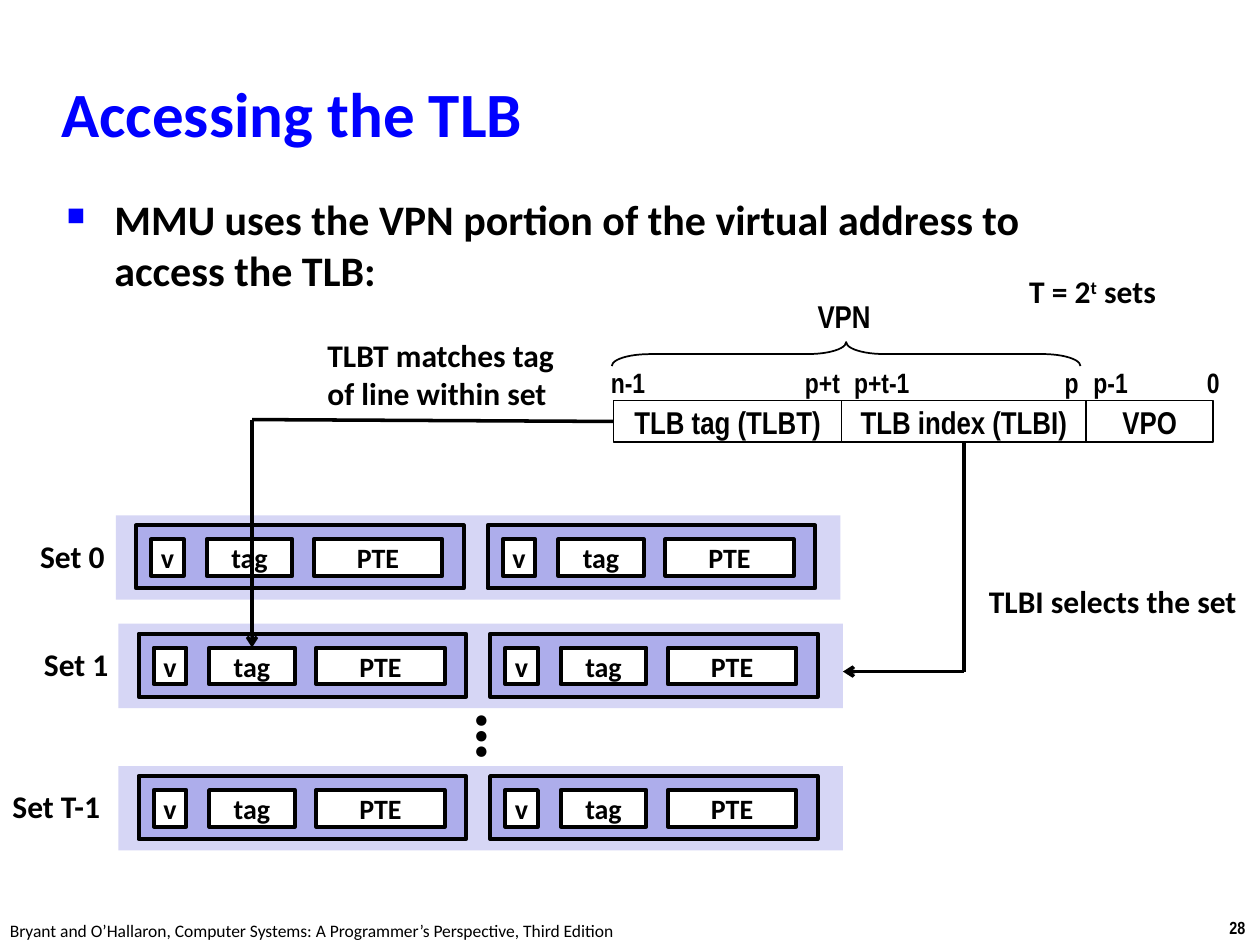
from dataclasses import dataclass

from lxml import etree
from pptx import Presentation
from pptx import util as u
from pptx.dml.color import RGBColor
from pptx.enum import shapes, text
from pptx.oxml.ns import qn


@dataclass(frozen=True)
class Theme:
    black: RGBColor = RGBColor(0, 0, 0)
    white: RGBColor = RGBColor(255, 255, 255)
    accent: RGBColor = RGBColor(0, 0, 255)
    set_fill: RGBColor = RGBColor(0xD6, 0xD6, 0xF5)
    line_fill: RGBColor = RGBColor(0xAD, 0xAD, 0xEB)
    sans: str = "Calibri"
    narrow: str = "Arial Narrow"
    title: int = 36
    body: int = 24
    label: int = 18
    small: int = 16
    footer: int = 10
    dots: int = 40


T = Theme()
MIDDLE = text.MSO_ANCHOR.MIDDLE


def inches(*values):
    return [u.Inches(v) for v in values]


def add_child(parent, tag, **attrs):
    child = etree.SubElement(parent, qn(tag))
    for name, value in attrs.items():
        child.set(name, value)
    return child


def format_runs(p, size, font, color=T.black, bold=True):
    for r in p.runs:
        r.font.size = u.Pt(size)
        r.font.name = font
        r.font.bold = bold
        r.font.color.rgb = color


def add_text(s, words, box, size=T.label, font=T.sans, color=T.black,
             bold=True, wrap=False, anchor=text.MSO_ANCHOR.TOP, grow=True):
    sp = s.shapes.add_textbox(*inches(*box))
    tf = sp.text_frame
    tf.text = words
    tf.word_wrap = wrap
    tf.vertical_anchor = anchor
    if grow:
        tf.auto_size = text.MSO_AUTO_SIZE.SHAPE_TO_FIT_TEXT
    format_runs(tf.paragraphs[0], size, font, color, bold)
    return sp


def add_box(s, box, fill, line_width=None, words="", size=T.small, font=T.sans):
    sp = s.shapes.add_shape(shapes.MSO_SHAPE.RECTANGLE, *inches(*box))
    sp.shadow.inherit = False
    sp.fill.solid()
    sp.fill.fore_color.rgb = fill
    if line_width:
        sp.line.color.rgb = T.black
        sp.line.width = u.Pt(line_width)
    else:
        sp.line.fill.background()
    if words:
        tf = sp.text_frame
        tf.text = words
        tf.word_wrap = False
        tf.vertical_anchor = MIDDLE
        tf.paragraphs[0].alignment = text.PP_ALIGN.CENTER
        format_runs(tf.paragraphs[0], size, font)
    return sp


def add_line(s, start, end, arrow=False):
    c = s.shapes.add_connector(shapes.MSO_CONNECTOR.STRAIGHT,
                               *inches(*start, *end))
    c.line.color.rgb = T.black
    c.line.width = u.Pt(2)
    if arrow:
        add_child(c.line._get_or_add_ln(), "a:tailEnd", type="arrow")
    add_child(c._element.spPr, "a:effectLst")
    return c


def add_bullet(p):
    """Give the paragraph a hanging square bullet in the accent colour."""
    pPr = p._p.get_or_add_pPr()
    pPr.set("marL", str(u.Inches(0.38)))
    pPr.set("indent", str(-u.Inches(0.38)))
    add_child(add_child(pPr, "a:buClr"), "a:srgbClr", val=str(T.accent))
    add_child(pPr, "a:buSzPct", val="60000")
    add_child(pPr, "a:buChar", char="■")


def add_heading(s):
    add_text(s, "Accessing the TLB", (0.39, 0.48, 8.3, 0.83), T.title,
             color=T.accent, wrap=True, anchor=MIDDLE, grow=False)
    body = add_text(
        s, "MMU uses the VPN portion of the virtual address to access the TLB:",
        (0.43, 1.49, 8.64, 0.93), T.body, wrap=True, grow=False)
    p = body.text_frame.paragraphs[0]
    p.space_before = u.Pt(4.8)
    add_bullet(p)


def add_address(s):
    """Draw the virtual address and return its tag and index fields."""
    fields = []
    x = 4.87
    for words, width in (("TLB tag (TLBT)", 1.81), ("TLB index (TLBI)", 1.94),
                         ("VPO", 1.01)):
        fields.append(add_box(s, (x, 3.18, width, 0.33), T.white, 1, words,
                              T.label, T.narrow))
        x += width

    for words, left, width in (("n-1", 4.75, 0.48), ("p+t", 6.29, 0.48),
                               ("p+t-1", 6.68, 0.65), ("p", 8.35, 0.31),
                               ("p-1", 8.58, 0.48), ("0", 9.48, 0.3)):
        add_text(s, words, (left, 2.85, width, 0.37), T.small, T.narrow,
                 anchor=MIDDLE)

    brace = s.shapes.add_shape(shapes.MSO_SHAPE.LEFT_BRACE,
                               *inches(6.62, 0.95, 0.19, 3.72))
    brace.rotation = 90
    brace.adjustments[0] = 1.595
    brace.adjustments[1] = 0.5
    brace.shadow.inherit = False
    brace.fill.background()
    brace.line.color.rgb = T.black
    brace.line.width = u.Pt(1)
    add_text(s, "VPN", (6.39, 2.31, 0.63, 0.4), font=T.narrow, anchor=MIDDLE)
    return fields[:2]


def add_set(s, left, top):
    """Draw one set of two cache lines and return their tag cells."""
    add_box(s, (left, top, 5.75, 0.67), T.set_fill)
    tags = []
    for x in (left + 0.16, left + 2.95):
        y = top + 0.08
        add_box(s, (x, y, 2.6, 0.5), T.line_fill, 2.25)
        cells = {words: add_box(s, (x + dx, y + 0.11, width, 0.29),
                                T.white, 2.25, words)
                 for words, dx, width in (("v", 0.12, 0.26),
                                          ("tag", 0.56, 0.68),
                                          ("PTE", 1.41, 1.02))}
        tags.append(cells["tag"])
    return tags


def add_sets(s):
    """Draw all sets and return the tag cells by set name."""
    tags = {}
    for name, left, top, label_left, label_width in (
            ("Set 0", 0.92, 4.09, 0.22, 0.72),
            ("Set 1", 0.94, 4.95, 0.25, 0.72),
            ("Set T-1", 0.94, 6.08, 0, 0.92)):
        tags[name] = add_set(s, left, top)
        add_text(s, name, (label_left, top + 0.12, label_width, 0.4))
    dots = add_text(s, "…", (3.34, 5.46, 0.6, 0.77), T.dots)
    dots.rotation = 270
    return tags


def add_lookup(s, tag_field, index_field, matched_tag):
    """Link the address fields to the set and the tag they choose."""
    add_line(s, (7.65, 3.51), (7.65, 5.33)).begin_connect(index_field, 2)
    add_line(s, (7.65, 5.33), (6.69, 5.33), arrow=True)
    add_text(s, "TLBI selects the set", (7.75, 4.57, 2.19, 0.4))

    add_line(s, (4.87, 3.35), (2, 3.33)).begin_connect(tag_field, 1)
    add_line(s, (2, 3.33), (2, 5.14), arrow=True).end_connect(matched_tag, 0)
    add_text(s, "TLBT matches tag of line within set", (2.5, 2.62, 2.25, 0.71),
             wrap=True)


def add_set_count(s):
    sp = add_text(s, "T = 2", (8.07, 2.11, 1.25, 0.4), wrap=True)
    p = sp.text_frame.paragraphs[0]
    exponent = p.add_run()
    exponent.text = "t"
    p.add_run().text = " sets"
    format_runs(p, T.label, T.sans)
    exponent.font._element.set("baseline", "30000")


def add_footer(s):
    add_text(s, "28", (9.66, 7.23, 0.34, 0.27), T.footer, T.narrow)
    add_text(s, "Bryant and O’Hallaron, Computer Systems: "
             "A Programmer’s Perspective, Third Edition",
             (-0.02, 7.25, 5.08, 0.27), T.footer, bold=False)


def main():
    prs = Presentation()
    prs.slide_width, prs.slide_height = inches(10, 7.5)
    s = prs.slides.add_slide(prs.slide_layouts[6])
    add_footer(s)
    add_heading(s)
    tag_field, index_field = add_address(s)
    tags = add_sets(s)
    add_set_count(s)
    add_lookup(s, tag_field, index_field, tags["Set 1"][0])
    prs.save("out.pptx")


if __name__ == "__main__":
    main()
